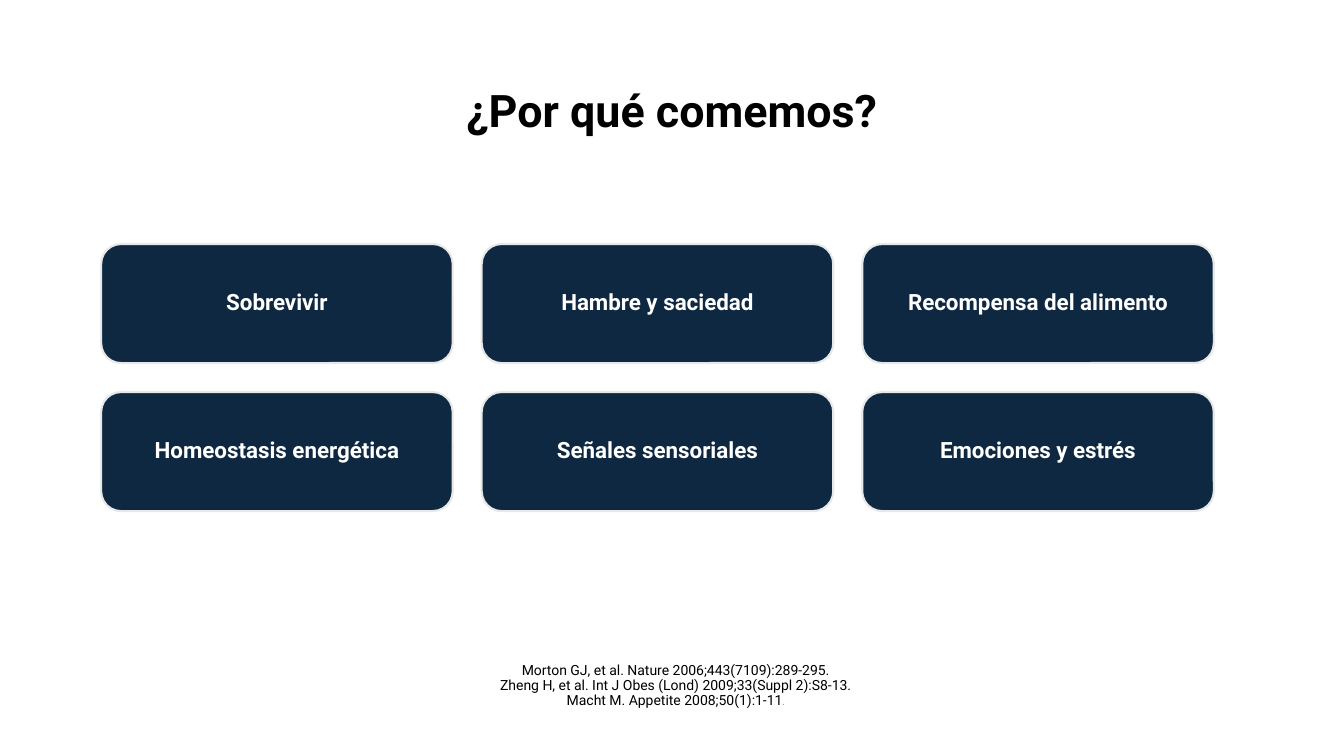
from pptx import Presentation
from pptx.dml.color import RGBColor
from pptx.enum.shapes import MSO_SHAPE as SHAPE
from pptx.enum.text import MSO_ANCHOR as ANCHOR, PP_ALIGN as ALIGN
from pptx.util import Cm, Pt

NAVY = RGBColor(0x0E, 0x28, 0x41)
PALE = RGBColor(0xE8, 0xE8, 0xE8)
WHITE = RGBColor(0xFF, 0xFF, 0xFF)
BLACK = RGBColor(0x00, 0x00, 0x00)

REASONS = [
    ["Sobrevivir", "Hambre y saciedad", "Recompensa del alimento"],
    ["Homeostasis energética", "Señales sensoriales", "Emociones y estrés"],
]
REFERENCES = [
    "Morton GJ, et al. Nature 2006;443(7109):289-295.",
    "Zheng H, et al. Int J Obes (Lond) 2009;33(Suppl 2):S8-13.",
    "Macht M. Appetite 2008;50(1):1-11",
]


class Deck:
    font = "Roboto"

    def __init__(self, width, height):
        self.prs = Presentation()
        self.prs.slide_width, self.prs.slide_height = Cm(width), Cm(height)
        self.s = self.prs.slides.add_slide(self.prs.slide_layouts[6])

    def fill_text(self, sp, lines, size, color, bold=False, anchor=ANCHOR.MIDDLE):
        tf = sp.text_frame
        tf.word_wrap = True
        tf.vertical_anchor = anchor
        tf.text = "\n".join(lines)
        for p in tf.paragraphs:
            p.alignment = ALIGN.CENTER
            p.line_spacing = 0.9
            for r in p.runs:
                self.style_run(r, size, color, bold)
        return tf

    def style_run(self, r, size, color, bold=False):
        r.font.name = self.font
        r.font.size = Pt(size)
        r.font.bold = bold
        r.font.color.rgb = color

    def text(self, x, y, w, h, lines, size, **options):
        sp = self.s.shapes.add_textbox(Cm(x), Cm(y), Cm(w), Cm(h))
        return self.fill_text(sp, lines, size, BLACK, **options)

    def card(self, x, y, w, h, label):
        sp = self.s.shapes.add_shape(SHAPE.ROUNDED_RECTANGLE, Cm(x), Cm(y), Cm(w), Cm(h))
        sp.shadow.inherit = False
        sp.fill.solid()
        sp.fill.fore_color.rgb = NAVY
        sp.line.color.rgb = PALE
        sp.line.width = Pt(1.5)
        self.fill_text(sp, [label], 16, WHITE, bold=True)


def main():
    deck = Deck(33.87, 19.05)

    # Grid of reasons
    left, top, width, height, gap = 2.55, 6.15, 8.86, 3, 0.73
    for row, labels in enumerate(REASONS):
        for col, label in enumerate(labels):
            deck.card(left + col * (width + gap), top + row * (height + gap),
                      width, height, label)

    # Title
    deck.text(2.33, 1.01, 29.21, 3.68, ["¿Por qué comemos?"], 32, bold=True)

    # References, closed by a small full stop
    tf = deck.text(5.1, 16.59, 23.85, 1.5, REFERENCES, 10, anchor=ANCHOR.TOP)
    r = tf.paragraphs[-1].add_run()
    r.text = "."
    deck.style_run(r, 5, BLACK)

    deck.prs.save("out.pptx")


if __name__ == "__main__":
    main()
